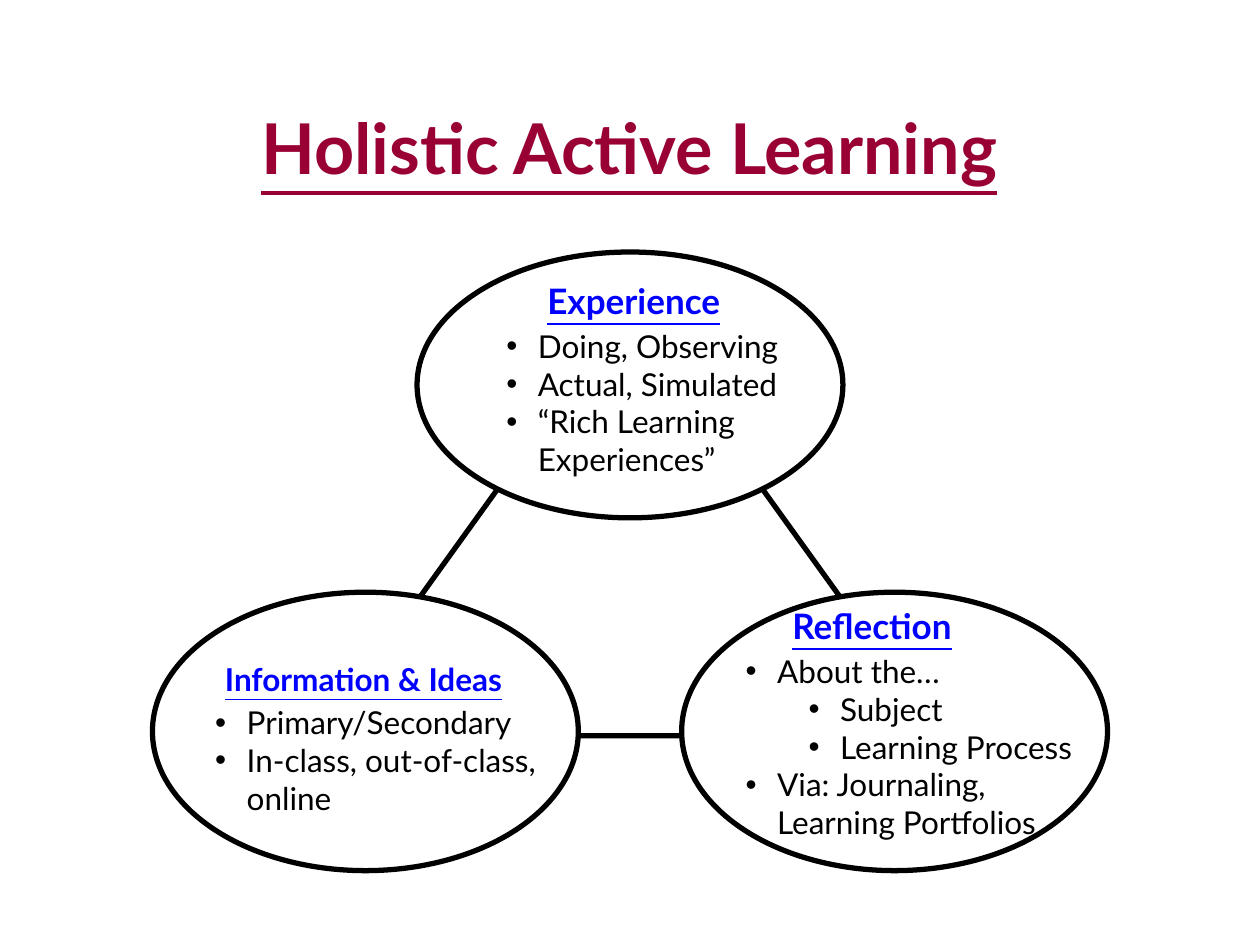
from lxml.etree import SubElement
from pptx import Presentation
from pptx.dml.color import RGBColor
from pptx.enum.shapes import MSO_SHAPE as Shape
from pptx.enum.text import MSO_ANCHOR as Anchor, PP_ALIGN as Align
from pptx.oxml.ns import qn
from pptx.util import Inches, Pt

THEME = {
    "font": "Lato", "title": "990033", "heading": "0000FF", "ink": "000000",
    "paper": "FFFFFF", "title_size": 40, "body_size": 18, "outline": 3,
}
TITLE = "Holistic Active Learning"
TITLE_BOX = (1.33, 0.75, 7.33, 0.83)
TRIANGLE = (2.54, 2.42, 4.92, 3.42)
STAGES = [
    {
        "heading": "Experience", "size": 20, "align": Align.CENTER, "heading_indent": 0.3,
        "oval": (3.31, 2, 3.38, 2.11), "box": (3.42, 2.17, 2.92, 1.67), "indent": 0.75,
        "points": [(1, "Doing, Observing"), (1, "Actual, Simulated"),
                   (1, "“Rich Learning Experiences”")],
    },
    {
        "heading": "Information & Ideas", "size": 18, "align": Align.CENTER, "heading_indent": 0,
        "oval": (1.21, 4.7, 3.38, 2.21), "box": (1.36, 5.19, 3.05, 1.48), "indent": 0.5,
        "points": [(1, "Primary/Secondary"), (1, "In-class, out-of-class, online")],
    },
    {
        "heading": "Reflection", "size": 20, "align": Align.LEFT, "heading_indent": 0.87,
        "oval": (5.41, 4.7, 3.38, 2.21), "box": (5.32, 4.75, 3.43, 2.09), "indent": 0.75,
        "points": [(1, "About the…"), (2, "Subject"), (2, "Learning Process"),
                   (1, "Via: Journaling, Learning Portfolios")],
    },
]
HANGING = 0.25
LEVEL_STEP = 0.5


def color(name):
    return RGBColor.from_string(THEME[name])


def add_outline(slide, kind, bounds, filled):
    outline = slide.shapes.add_shape(kind, *map(Inches, bounds))
    outline.shadow.inherit = False
    if filled:
        outline.fill.solid()
        outline.fill.fore_color.rgb = color("paper")
    else:
        outline.fill.background()
    outline.line.color.rgb = color("ink")
    outline.line.width = Pt(THEME["outline"])


def add_frame(slide, bounds, anchor):
    frame = slide.shapes.add_textbox(*map(Inches, bounds)).text_frame
    frame.word_wrap = True
    frame.vertical_anchor = anchor
    return frame


def write(paragraph, text, size, ink, emphasis=False):
    paragraph.text = text
    font = paragraph.runs[0].font
    font.name = THEME["font"]
    font.size = Pt(size)
    font.color.rgb = color(ink)
    font.bold = font.underline = emphasis


def indent(paragraph, left, hanging=0):
    properties = paragraph._p.get_or_add_pPr()
    properties.set("marL", str(Inches(left)))
    properties.set("indent", str(-Inches(hanging)))
    return properties


def add_stage_text(slide, stage):
    frame = add_frame(slide, stage["box"], Anchor.TOP)
    heading = frame.paragraphs[0]
    write(heading, stage["heading"], stage["size"], "heading", True)
    heading.alignment = stage["align"]
    heading.space_after = Pt(3)
    indent(heading, stage["heading_indent"])
    for level, text in stage["points"]:
        point = frame.add_paragraph()
        point.level = level
        left = stage["indent"] + LEVEL_STEP * (level - 1)
        properties = indent(point, left, HANGING)
        SubElement(properties, qn("a:buFont"), typeface="Arial")
        SubElement(properties, qn("a:buChar"), char="•")
        write(point, text, THEME["body_size"], "ink")


def main():
    deck = Presentation()
    deck.slide_width, deck.slide_height = Inches(10), Inches(7.5)
    slide = deck.slides.add_slide(deck.slide_layouts[6])

    add_outline(slide, Shape.ISOSCELES_TRIANGLE, TRIANGLE, False)
    title = add_frame(slide, TITLE_BOX, Anchor.MIDDLE).paragraphs[0]
    write(title, TITLE, THEME["title_size"], "title", True)
    title.alignment = Align.CENTER
    for stage in STAGES:
        add_outline(slide, Shape.OVAL, stage["oval"], True)
    for stage in STAGES:
        add_stage_text(slide, stage)

    deck.save("out.pptx")


if __name__ == "__main__":
    main()
